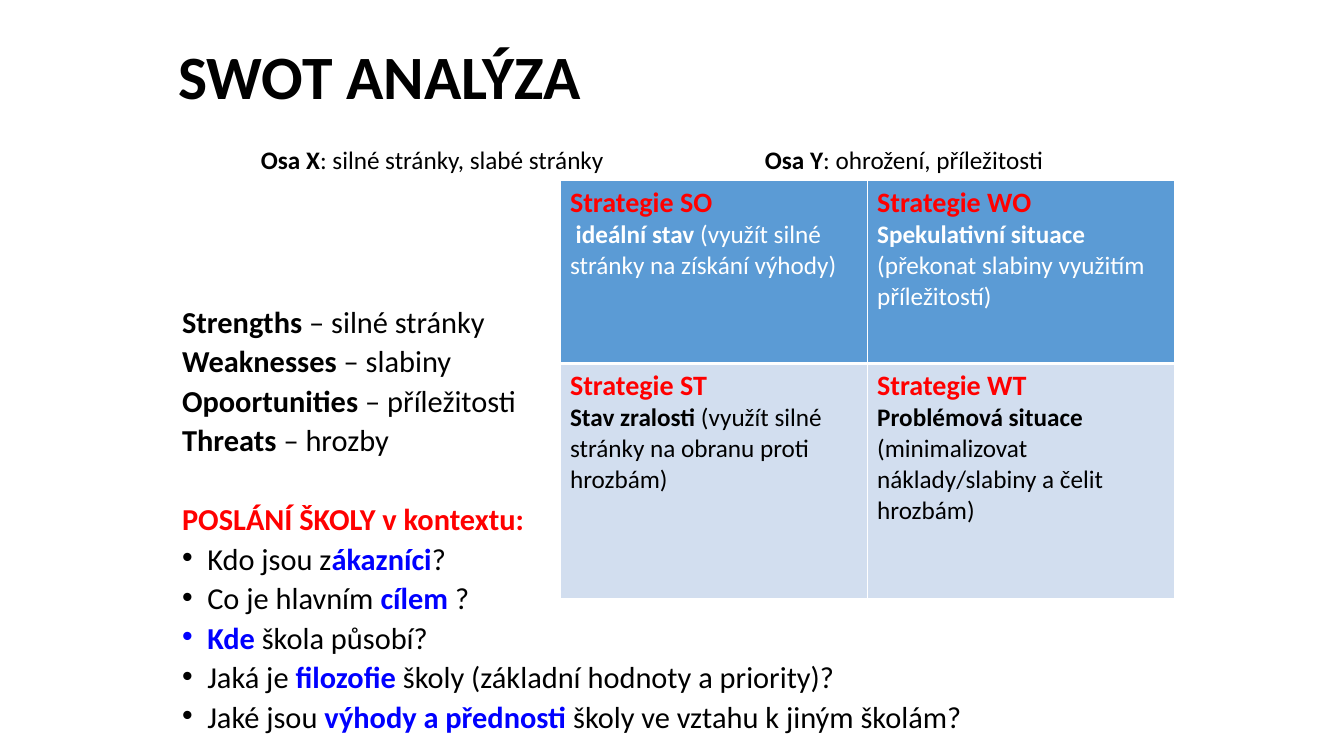
"""Build the SWOT analysis slide."""
from lxml.etree import SubElement
from pptx import Presentation
from pptx.dml.color import RGBColor
from pptx.enum.text import MSO_ANCHOR, PP_ALIGN
from pptx.oxml.ns import qn
from pptx.util import Pt

BLACK = RGBColor(0, 0, 0)
WHITE = RGBColor(255, 255, 255)
RED = RGBColor(255, 0, 0)
BLUE = RGBColor(0, 0, 255)
SKY = RGBColor(0x5B, 0x9B, 0xD5)
PALE = RGBColor(0xD2, 0xDE, 0xEF)

TITLE = "SWOT ANALÝZA"
AXES = [
    ("Osa X", ": silné stránky, slabé stránky\t"),
    ("Osa Y", ": ohrožení, příležitosti"),
]
TERMS = [
    ("Strengths", " – silné stránky"),
    ("Weaknesses", " – slabiny"),
    ("Opoortunities", " – příležitosti"),
    ("Threats", " – hrozby"),
]
HEAD = "POSLÁNÍ ŠKOLY v kontextu:"
ASKS = [
    ("Kdo jsou z", "ákazníci", "?"),
    ("Co je hlavním ", "cílem", " ?"),
    ("", "Kde ", "škola působí?"),
    ("Jaká je ", "filozofie", " školy (základní hodnoty a priority)?"),
    ("Jaké jsou ", "výhody a přednosti ", "školy ve vztahu k jiným školám?"),
]
PLANS = [
    [
        ("Strategie SO", " ideální stav ", "(využít silné stránky na získání výhody)"),
        ("Strategie WO", "Spekulativní situace ", "(překonat slabiny využitím příležitostí)"),
    ],
    [
        ("Strategie ST", "Stav zralosti ", "(využít silné stránky na obranu proti hrozbám)"),
        ("Strategie WT", "Problémová situace ", "(minimalizovat náklady/slabiny a čelit hrozbám)"),
    ],
]
LOOKS = [(SKY, WHITE), (PALE, BLACK)]
WIDTHS = [219.4, 219.4]
HEIGHTS = [130.7, 168.1]
SIZE, GAP, BREAK = 21.7, 10, 38


def write(para, text, size=18, color=BLACK, bold=False):
    """Add one formatted run to a paragraph."""
    run = para.add_run()
    run.text = text
    font = run.font
    font.name, font.size, font.bold = "Calibri", Pt(size), bold
    font.color.rgb = color


def add_box(slide, left, top, width, height):
    """Add a wrapping text box and return its frame."""
    frame = slide.shapes.add_textbox(Pt(left), Pt(top), Pt(width), Pt(height)).text_frame
    frame.word_wrap = True
    return frame


def add_line(frame, gap=GAP, mark=False):
    """Return the next body paragraph, with a hanging indent."""
    first = frame.paragraphs[0]
    para = frame.add_paragraph() if first.runs else first
    para.line_spacing = 0.7
    para.space_before = Pt(gap)
    props = para._p.get_or_add_pPr()
    props.set("marL", str(Pt(18)))
    props.set("indent", str(-Pt(18)))
    if mark:
        SubElement(props, qn("a:buFont"), typeface="Arial")
        SubElement(props, qn("a:buChar"), char="•")
    else:
        SubElement(props, qn("a:buNone"))
    return para


def edge(cell, **sides):
    """Draw white cell borders of the given widths."""
    props = cell._tc.get_or_add_tcPr()
    for side, width in sides.items():
        line = SubElement(props, qn(f"a:ln{side}"), w=str(Pt(width)))
        SubElement(SubElement(line, qn("a:solidFill")), qn("a:srgbClr"), val=str(WHITE))


def add_title(slide):
    """Place and fill the title."""
    title = slide.shapes.title
    title.left, title.top, title.width, title.height = Pt(120), Pt(11.5), Pt(720), Pt(90)
    title.text_frame.vertical_anchor = MSO_ANCHOR.MIDDLE
    para = title.text_frame.paragraphs[0]
    para.alignment, para.line_spacing = PP_ALIGN.LEFT, 0.9
    write(para, TITLE, size=44, bold=True)


def add_body(slide):
    """Add the terms and the questions."""
    frame = add_box(slide, 123, 220, 648, 320)
    for term, note in TERMS:
        para = add_line(frame)
        write(para, term, size=SIZE, bold=True)
        write(para, note, size=SIZE)
    write(add_line(frame, gap=BREAK), HEAD, size=SIZE, color=RED, bold=True)
    for start, key, end in ASKS:
        para = add_line(frame, mark=True)
        if start:
            write(para, start, size=SIZE)
        write(para, key, size=SIZE, color=BLUE, bold=True)
        write(para, end, size=SIZE)


def add_axes(slide):
    """Add the axis labels, with the second at a tab stop."""
    para = add_box(slide, 179.3, 99.6, 584, 29).paragraphs[0]
    tabs = SubElement(para._p.get_or_add_pPr(), qn("a:tabLst"))
    SubElement(tabs, qn("a:tab"), pos=str(Pt(360)), algn="l")
    for name, note in AXES:
        write(para, name, bold=True)
        write(para, note)


def add_grid(slide):
    """Add the table of four strategies."""
    table = slide.shapes.add_table(
        len(PLANS), len(WIDTHS), Pt(400), Pt(129), Pt(sum(WIDTHS)), Pt(sum(HEIGHTS))
    ).table
    for col, width in zip(table.columns, WIDTHS):
        col.width = Pt(width)
    for r, (plans, (fill, ink)) in enumerate(zip(PLANS, LOOKS)):
        table.rows[r].height = Pt(HEIGHTS[r])
        for c, (name, state, note) in enumerate(plans):
            cell = table.cell(r, c)
            edge(cell, L=1, R=1, T=3 if r else 1, B=1 if r else 3)
            cell.fill.solid()
            cell.fill.fore_color.rgb = fill
            write(cell.text_frame.paragraphs[0], name, size=20, color=RED, bold=True)
            para = cell.text_frame.add_paragraph()
            write(para, state, color=ink, bold=True)
            write(para, note, color=ink)


def main():
    """Build and save the deck."""
    deck = Presentation()
    deck.slide_width, deck.slide_height = Pt(960), Pt(540)
    slide = deck.slides.add_slide(deck.slide_layouts[5])
    add_title(slide)
    add_body(slide)
    add_axes(slide)
    add_grid(slide)
    deck.save("out.pptx")


if __name__ == "__main__":
    main()
